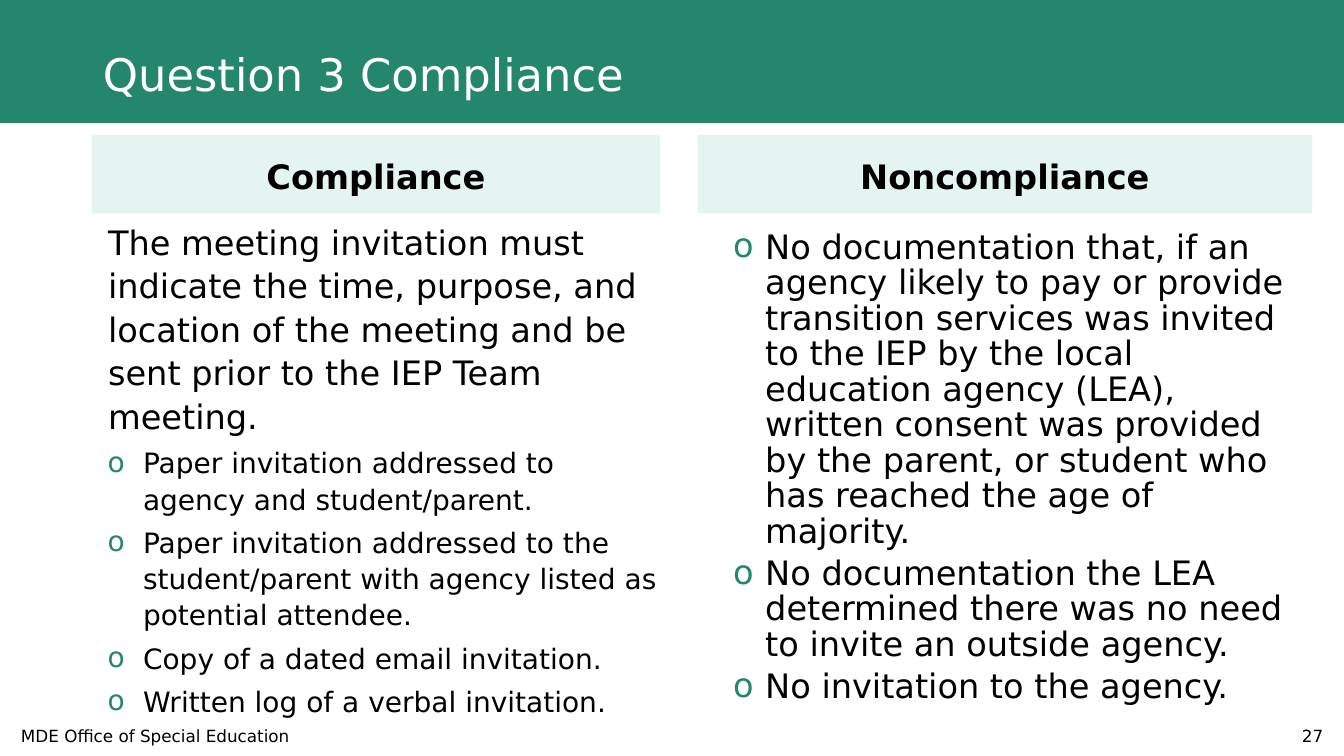
from dataclasses import dataclass

from lxml.etree import SubElement
from pptx import Presentation
from pptx.dml.color import RGBColor
from pptx.enum.shapes import MSO_SHAPE
from pptx.enum.text import MSO_ANCHOR as Anchor, MSO_AUTO_SIZE as AutoSize, PP_ALIGN as Align
from pptx.oxml.ns import qn
from pptx.util import Cm, Pt


@dataclass(frozen=True)
class Theme:
    font: str = "DejaVu Sans"
    green: str = "25866E"
    mint: str = "E4F4F0"
    white: str = "FFFFFF"
    black: str = "000000"
    title_size: float = 32
    large_size: float = 24
    list_size: float = 20
    footer_size: float = 12


THEME = Theme()
COMPARISON_LAYOUT = 4

COMPLIANCE_INTRO = (
    "The meeting invitation must indicate the time, purpose, and location of "
    "the meeting and be sent prior to the IEP Team meeting."
)
COMPLIANCE_ITEMS = [
    "Paper invitation addressed to agency and student/parent.",
    "Paper invitation addressed to the student/parent with agency listed as potential attendee.",
    "Copy of a dated email invitation.",
    "Written log of a verbal invitation.",
]
NONCOMPLIANCE_ITEMS = [
    "No documentation that, if an agency likely to pay or provide transition services "
    "was invited to the IEP by the local education agency (LEA), written consent was "
    "provided by the parent, or student who has reached the age of majority.",
    "No documentation the LEA determined there was no need to invite an outside agency.",
    "No invitation to the agency.",
]


def set_all(target, **values):
    for name, value in values.items():
        setattr(target, name, value)


def place(shape, left, top, width, height):
    """Position a shape, with all lengths in centimetres."""
    set_all(shape, left=Cm(left), top=Cm(top), width=Cm(width), height=Cm(height))


def fill_solid(shape, color):
    shape.fill.solid()
    shape.fill.fore_color.rgb = RGBColor.from_string(color)


def prepare_frame(shape, anchor):
    set_all(shape.text_frame, word_wrap=True, auto_size=AutoSize.NONE, vertical_anchor=anchor)
    return shape.text_frame


def write(para, text, size, color=THEME.black, bold=False, **para_format):
    set_all(para, **para_format)
    span = para.add_run()
    span.text = text
    set_all(span.font, name=THEME.font, size=Pt(size), bold=bold)
    span.font.color.rgb = RGBColor.from_string(color)


def set_bullet(para, margin, hanging=0):
    """Indent a paragraph in centimetres; a hanging one gets a green "o" bullet."""
    properties = para._p.get_or_add_pPr()
    properties.set("marL", str(Cm(margin)))
    properties.set("indent", str(-Cm(hanging)))
    if not hanging:
        SubElement(properties, qn("a:buNone"))
        return
    color = SubElement(properties, qn("a:buClr"))
    SubElement(color, qn("a:srgbClr"), val=THEME.green)
    SubElement(properties, qn("a:buFont"), typeface=THEME.font)
    SubElement(properties, qn("a:buChar"), char="o")


def add_banner(page):
    banner = page.shapes.add_shape(MSO_SHAPE.RECTANGLE, 0, 0, Cm(33.87), Cm(3.1))
    banner.shadow.inherit = False
    fill_solid(banner, THEME.green)
    banner.line.fill.background()
    page.shapes.title.element.addprevious(banner.element)


def write_title(title, text):
    place(title, 2.34, 0.79, 29.21, 2.31)
    frame = prepare_frame(title, Anchor.MIDDLE)
    write(frame.paragraphs[0], text, THEME.title_size, THEME.white,
          alignment=Align.LEFT, line_spacing=0.9)


def write_heading(heading, text, left, width):
    place(heading, left, 3.4, width, 1.98)
    fill_solid(heading, THEME.mint)
    frame = prepare_frame(heading, Anchor.MIDDLE)
    write(frame.paragraphs[0], text, THEME.large_size, bold=True,
          alignment=Align.CENTER, line_spacing=1.08, space_before=Pt(0))


def write_list(body, entries, line_spacing):
    """Write entries of (text, size, margin, hanging)."""
    frame = prepare_frame(body, Anchor.TOP)
    for index, (text, size, margin, hanging) in enumerate(entries):
        para = frame.add_paragraph() if index else frame.paragraphs[0]
        set_bullet(para, margin, hanging)
        write(para, text, size, level=1, alignment=Align.LEFT,
              line_spacing=line_spacing, space_before=Pt(5 if index else 0))


def add_footer(page, text, left, top, width, alignment):
    box = page.shapes.add_textbox(Cm(left), Cm(top), Cm(width), Cm(1.02))
    frame = prepare_frame(box, Anchor.MIDDLE)
    write(frame.paragraphs[0], text, THEME.footer_size, alignment=alignment)


def main():
    deck = Presentation()
    set_all(deck, slide_width=Cm(33.87), slide_height=Cm(19.05))
    page = deck.slides.add_slide(deck.slide_layouts[COMPARISON_LAYOUT])
    title, left_heading, left_body, right_heading, right_body = page.placeholders

    add_banner(page)
    write_title(title, "Question 3 Compliance")

    write_heading(left_heading, "Compliance", 2.31, 14.33)
    place(left_body, 1.45, 5.38, 15.49, 12.88)
    intro = (COMPLIANCE_INTRO, THEME.large_size, 1.02, 0)
    items = [(text, THEME.list_size, 1.9, 0.89) for text in COMPLIANCE_ITEMS]
    write_list(left_body, [intro, *items], 1.08)

    write_heading(right_heading, "Noncompliance", 17.58, 15.49)
    place(right_body, 17.58, 5.69, 15.49, 12.34)
    items = [(text, THEME.large_size, 1.45, 0.81) for text in NONCOMPLIANCE_ITEMS]
    write_list(right_body, items, 0.88)

    add_footer(page, "MDE Office of Special Education", 0.28, 18.03, 11.43, Align.LEFT)
    add_footer(page, "27", 25.98, 18.03, 7.62, Align.RIGHT)
    deck.save("out.pptx")


if __name__ == "__main__":
    main()
